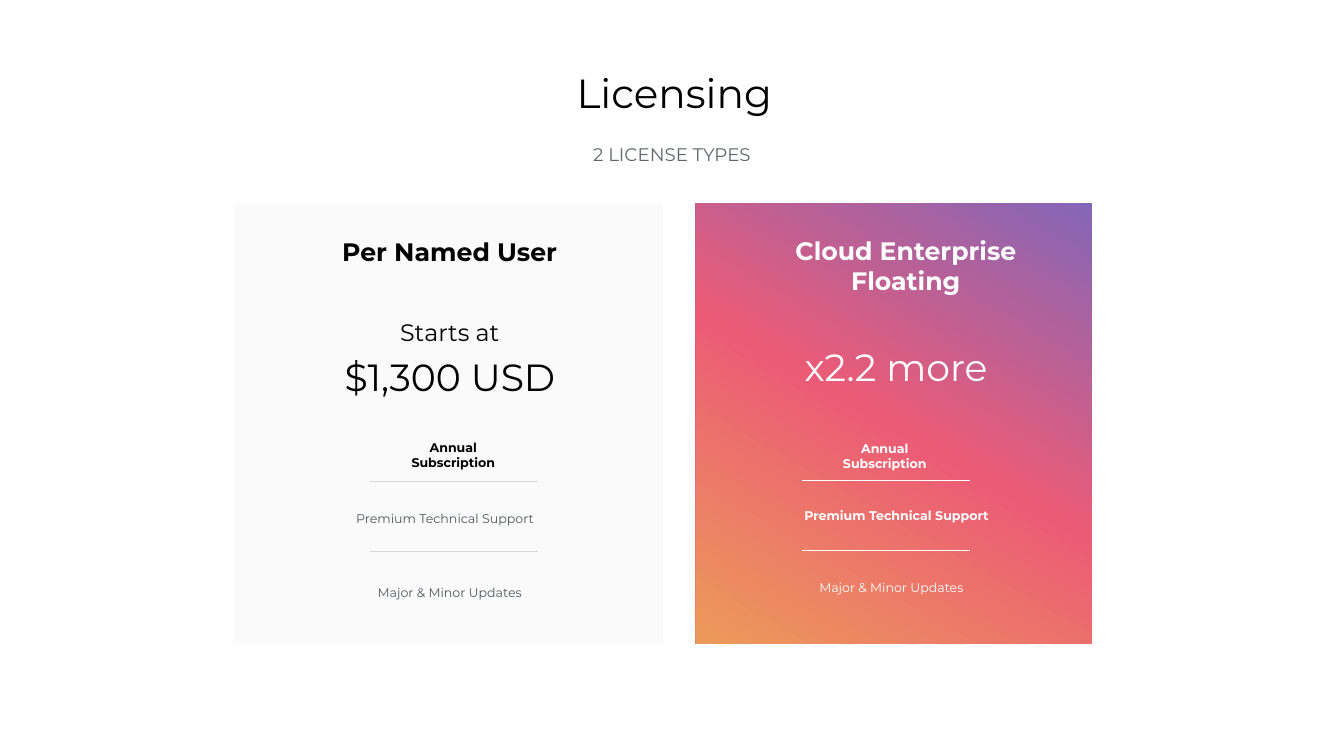
import copy

import pptx
import pptx.dml.color
import pptx.enum.shapes
import pptx.enum.text
import pptx.oxml.ns
import pptx.oxml.xmlchemy
import pptx.util

Cm = pptx.util.Cm
Pt = pptx.util.Pt


def color(value):
    return pptx.dml.color.RGBColor.from_string(value)


def add_text(page, text, place, size, ink, bold=False, spacing=None, anchor="MIDDLE"):
    box = page.shapes.add_textbox(*[Cm(length) for length in place])
    frame = box.text_frame
    frame.word_wrap = True
    frame.vertical_anchor = pptx.enum.text.MSO_ANCHOR[anchor]
    frame.margin_left = frame.margin_right = Cm(0.15)
    frame.margin_top = frame.margin_bottom = Cm(0.15)
    para = frame.paragraphs[0]
    para.alignment = pptx.enum.text.PP_ALIGN.CENTER
    if spacing:
        para.line_spacing = spacing
    span = para.add_run()
    span.text = text
    span.font.name = "Montserrat"
    span.font.size = Pt(size)
    span.font.bold = bold
    span.font.color.rgb = color(ink)


deck = pptx.Presentation()
deck.slide_width = Cm(67.74)
deck.slide_height = Cm(38.1)
page = deck.slides.add_slide(deck.slide_layouts[6])

cards = []
for left, width in [(11.79, 21.62), (35.08, 19.96)]:
    card = page.shapes.add_shape(
        pptx.enum.shapes.MSO_SHAPE.RECTANGLE, Cm(left), Cm(10.24), Cm(width), Cm(22.17)
    )
    card.shadow.inherit = False
    card.line.fill.background()
    cards.append(card)

user_card, floating_card = cards
user_card.fill.solid()
user_card.fill.fore_color.rgb = color("FAFAFA")

floating_card.fill.gradient()
floating_card.fill.gradient_angle = 240
stop_list = next(floating_card.element.iter(pptx.oxml.ns.qn("a:gsLst")))
stop_list.insert(1, copy.deepcopy(stop_list[0]))
stops = [(0, "8466B8"), (0.5, "EC5B76"), (1, "EC9A59")]
for stop, (position, tint) in zip(floating_card.fill.gradient_stops, stops):
    stop.position = position
    stop.color.rgb = color(tint)

dividers = [
    (18.64, 24.26, "D6D6D6"),
    (18.64, 27.79, "D6D6D6"),
    (40.41, 24.23, "FFFFFF"),
    (40.41, 27.76, "FFFFFF"),
]
for left, top, ink in dividers:
    divider = page.shapes.add_connector(
        pptx.enum.shapes.MSO_CONNECTOR.STRAIGHT, Cm(left), Cm(top), Cm(left + 8.47), Cm(top)
    )
    divider.line.color.rgb = color(ink)
    divider.line.width = Pt(1)
    divider.element.spPr.append(pptx.oxml.xmlchemy.OxmlElement("a:effectLst"))

add_text(page, "Licensing", (19.33, 3.28, 29.31, 2.72), 58, "000000")
add_text(page, "2 LICENSE TYPES", (12.7, 6.83, 42.34, 1.73), 26, "60666D", spacing=1.2, anchor="TOP")

add_text(page, "Per Named User", (13.56, 11.71, 18.21, 1.9), 36, "000000", bold=True)
add_text(page, "Starts at", (19.71, 15.88, 5.92, 1.73), 34, "000000")
add_text(page, "$1,300 USD", (16.23, 16.84, 12.9, 4.27), 54, "000000")
add_text(page, "Annual Subscription", (20.55, 22.3, 4.6, 1.3), 18, "000000", bold=True)
add_text(page, "Premium Technical Support", (16.31, 24.74, 12.24, 2.41), 18, "53585F", spacing=1.5)
add_text(page, "Major & Minor Updates", (17.3, 29.11, 10.74, 1.12), 18, "53585F", spacing=1.5)

add_text(page, "Cloud Enterprise Floating", (37.69, 11.3, 15.93, 4.17), 36, "FFFFFF", bold=True)
add_text(page, "x2.2 more", (38.3, 16.94, 13.74, 3.05), 54, "FFFFFF")
add_text(page, "Annual Subscription", (41.99, 22.33, 5.21, 1.3), 18, "FFFFFF", bold=True)
add_text(page, "Premium Technical Support", (39.57, 24.82, 11.23, 2.34), 18, "FFFFFF", bold=True)
add_text(page, "Major & Minor Updates", (39.57, 28.12, 10.72, 2.64), 18, "FFFFFF", spacing=1.5)

deck.save("out.pptx")
